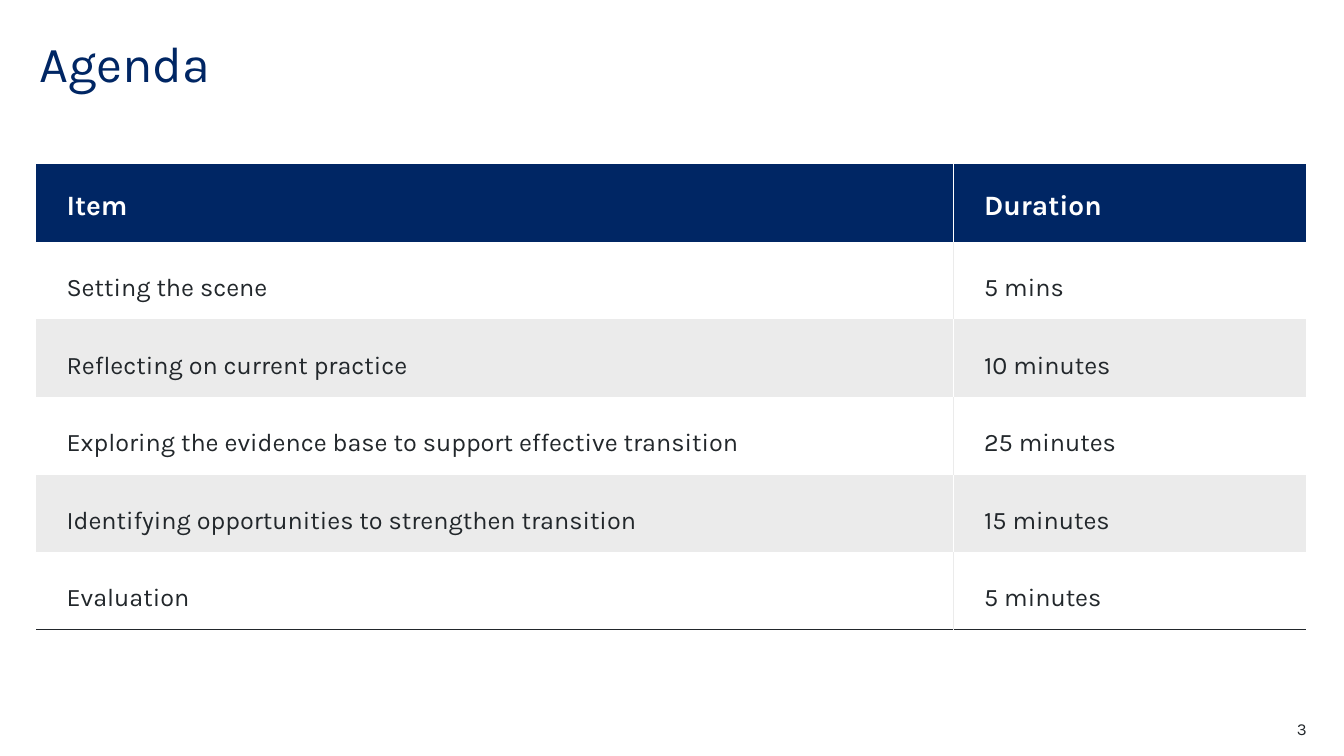
"""Build the agenda slide with its timetable."""
import lxml.etree
import pptx
import pptx.dml.color
import pptx.enum.text
import pptx.oxml.ns
import pptx.util

Inches = pptx.util.Inches
Pt = pptx.util.Pt
ALIGN = pptx.enum.text.PP_ALIGN
ANCHOR = pptx.enum.text.MSO_ANCHOR

NAVY, INK, GREY, WHITE = "002664", "22272B", "EBEBEB", "FFFFFF"
AGENDA = [
    ("Item", "Duration"),
    ("Setting the scene", "5 mins"),
    ("Reflecting on current practice", "10 minutes"),
    ("Exploring the evidence base to support effective transition", "25 minutes"),
    ("Identifying opportunities to strengthen transition", "15 minutes"),
    ("Evaluation", "5 minutes"),
]
COLUMN_WIDTHS = (9.1, 3.49)
ROW_HEIGHT = 0.77


def rgb(value):
    """Return the colour for a hex string."""
    return pptx.dml.color.RGBColor.from_string(value)


def apply(target, values):
    """Set each named attribute on the target."""
    for name, value in values.items():
        setattr(target, name, value)


def write(frame, text, size, color, bold=False, **layout):
    """Write one formatted paragraph into a text frame."""
    paragraph = frame.paragraphs[0]
    apply(paragraph, layout)
    run = paragraph.add_run()
    run.text = text
    apply(run.font, {"name": "Karla", "size": Pt(size), "bold": bold})
    run.font.color.rgb = rgb(color)
    return paragraph


def add_label(slide, box, text, size, color, **layout):
    """Add a text box without margins."""
    frame = slide.shapes.add_textbox(*map(Inches, box)).text_frame
    apply(frame, {"word_wrap": True, "margin_left": 0, "margin_right": 0,
                  "margin_top": 0, "margin_bottom": 0})
    write(frame, text, size, color, **layout)


def set_borders(cell, colors):
    """Draw the given cell edges and hide the others."""
    properties = cell._tc.get_or_add_tcPr()
    qn = pptx.oxml.ns.qn
    for edge in "LRTB":
        line = lxml.etree.SubElement(properties, qn(f"a:ln{edge}"), w=str(Pt(1)))
        if edge in colors:
            fill = lxml.etree.SubElement(line, qn("a:solidFill"))
            lxml.etree.SubElement(fill, qn("a:srgbClr"), val=colors[edge])
        else:
            lxml.etree.SubElement(line, qn("a:noFill"))


def format_cell(cell, text, row, column):
    """Fill one agenda cell according to its row and column."""
    header = row == 0
    fill = NAVY if header else (WHITE if row % 2 else GREY)
    borders = {"L" if column else "R": GREY if fill == WHITE else WHITE}
    if row == len(AGENDA) - 1:
        borders["B"] = INK
    set_borders(cell, borders)
    cell.fill.solid()
    cell.fill.fore_color.rgb = rgb(fill)
    cell.vertical_anchor = ANCHOR.MIDDLE
    paragraph = write(cell.text_frame, text, 20 if header else 18,
                      WHITE if header else INK, header,
                      line_spacing=1.2 if header else 1.5, space_after=Pt(12))
    paragraph._p.get_or_add_pPr().set("marL", str(Inches(0.2)))


def add_agenda(slide):
    """Add the agenda table."""
    box = (0.36, 1.63, sum(COLUMN_WIDTHS), ROW_HEIGHT * len(AGENDA))
    table = slide.shapes.add_table(len(AGENDA), len(COLUMN_WIDTHS), *map(Inches, box)).table
    table.horz_banding = False
    for column, width in zip(table.columns, COLUMN_WIDTHS):
        column.width = Inches(width)
    for row, texts in enumerate(AGENDA):
        for column, text in enumerate(texts):
            format_cell(table.cell(row, column), text, row, column)


def main():
    """Create and save the presentation."""
    presentation = pptx.Presentation()
    apply(presentation, {"slide_width": Inches(13.33), "slide_height": Inches(7.5)})
    slide = presentation.slides.add_slide(presentation.slide_layouts[6])
    add_label(slide, (0.39, 0.39, 11.02, 1.1), "Agenda", 36, NAVY, line_spacing=0.9)
    add_agenda(slide)
    add_label(slide, (12.17, 7.13, 0.79, 0.2), "3", 12, INK, alignment=ALIGN.RIGHT)
    presentation.save("out.pptx")


if __name__ == "__main__":
    main()
